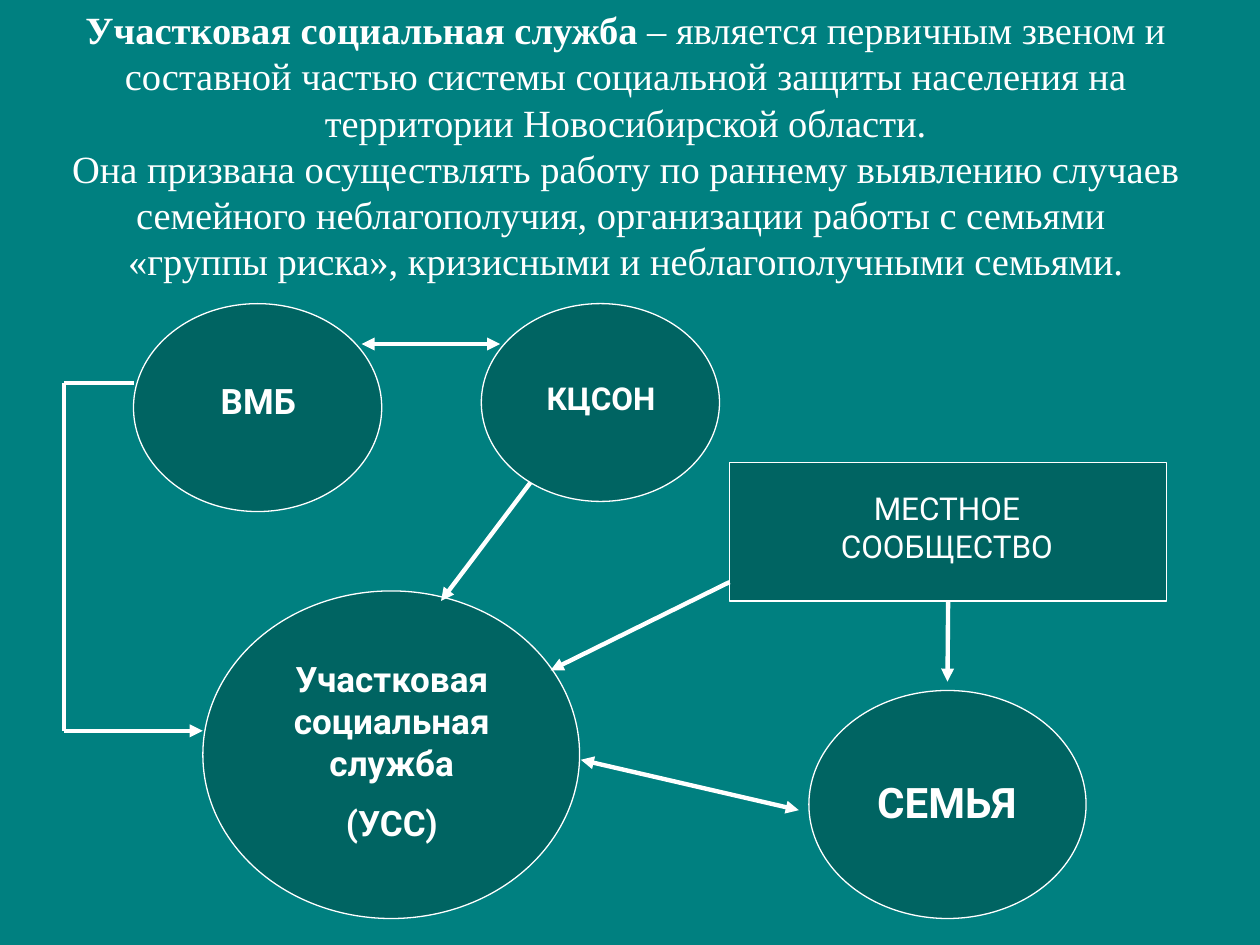
"""Build the slide on the district social service and its partners."""
import lxml.etree
import pptx
import pptx.dml.color
import pptx.enum.shapes
import pptx.enum.text
import pptx.oxml.ns
import pptx.util

Inches = pptx.util.Inches
Pt = pptx.util.Pt
RGBColor = pptx.dml.color.RGBColor
MSO_SHAPE = pptx.enum.shapes.MSO_SHAPE
qn = pptx.oxml.ns.qn

TEAL = RGBColor(0x00, 0x80, 0x80)
DARK_TEAL = RGBColor(0x00, 0x64, 0x62)
WHITE = RGBColor(0xFF, 0xFF, 0xFF)


def add_text(slide, box, text, font_name, size, bold):
    textbox = slide.shapes.add_textbox(*map(Inches, box))
    text_frame = textbox.text_frame
    text_frame.word_wrap = True
    text_frame.auto_size = pptx.enum.text.MSO_AUTO_SIZE.SHAPE_TO_FIT_TEXT
    text_frame.text = text
    for paragraph in text_frame.paragraphs:
        paragraph.alignment = pptx.enum.text.PP_ALIGN.CENTER
        for run in paragraph.runs:
            run.font.name = font_name
            run.font.size = Pt(size)
            run.font.bold = bold
            run.font.color.rgb = WHITE
    return text_frame


def add_line(slide, start, end, arrowheads):
    connector = slide.shapes.add_connector(
        pptx.enum.shapes.MSO_CONNECTOR.STRAIGHT, *map(Inches, start + end))
    connector.line.color.rgb = WHITE
    connector.line.width = Pt(2.5)
    line_properties = connector.line._get_or_add_ln()
    for arrowhead in arrowheads:
        lxml.etree.SubElement(line_properties, qn(f"a:{arrowhead}"), type="triangle")
    lxml.etree.SubElement(connector._element.spPr, qn("a:effectLst"))
    return connector


presentation = pptx.Presentation()
presentation.slide_width = Inches(10)
presentation.slide_height = Inches(7.5)
slide = presentation.slides.add_slide(presentation.slide_layouts[6])
slide.background.fill.solid()
slide.background.fill.fore_color.rgb = TEAL

nodes = [
    (MSO_SHAPE.OVAL, (1.61, 4.69, 2.99, 2.6), (2.01, 5.17, 2.2, 1.6),
     "Участковая социальная служба\n(УСС)", 20, True),
    (MSO_SHAPE.RECTANGLE, (5.79, 3.67, 3.47, 1.1), (6.02, 3.83, 2.99, 0.7),
     "МЕСТНОЕ СООБЩЕСТВО", 18, False),
    (MSO_SHAPE.OVAL, (6.42, 5.48, 2.2, 1.81), (6.73, 6.11, 1.57, 0.5),
     "СЕМЬЯ", 24, True),
    (MSO_SHAPE.OVAL, (1.06, 2.41, 1.97, 1.65), (1.38, 2.96, 1.34, 0.43),
     "ВМБ", 20, True),
    (MSO_SHAPE.OVAL, (3.82, 2.41, 1.89, 1.57), (4.06, 2.96, 1.42, 0.4),
     "КЦСОН", 18, True),
]
node_shapes = []
for shape_type, shape_box, text_box, label, size, bold in nodes:
    shape = slide.shapes.add_shape(shape_type, *map(Inches, shape_box))
    shape.shadow.inherit = False
    shape.fill.solid()
    shape.fill.fore_color.rgb = DARK_TEAL
    shape.line.color.rgb = WHITE
    shape.line.width = Pt(0.75)
    node_shapes.append(shape)
    text_frame = add_text(slide, text_box, label, "Roboto", size, bold)
    for paragraph in text_frame.paragraphs[1:]:
        paragraph.space_before = Pt(size / 2)

links = [
    ((2.87, 2.73), (3.97, 2.73), ("headEnd", "tailEnd")),
    ((4.21, 3.83), (3.5, 4.77), ("tailEnd",)),
    ((5.79, 4.62), (4.37, 5.32), ("tailEnd",)),
    ((4.61, 6.03), (6.34, 6.43), ("headEnd", "tailEnd")),
    ((1.06, 3.04), (0.51, 3.04), ()),
    ((0.51, 3.04), (0.51, 5.8), ()),
    ((0.51, 5.8), (1.61, 5.8), ("tailEnd",)),
]
for start, end, arrowheads in links:
    add_line(slide, start, end, arrowheads)

community = node_shapes[1]
community_to_family = add_line(slide, (7.52, 4.77), (7.52, 5.41), ("tailEnd",))
community_to_family.begin_connect(community, 2)

term = "Участковая социальная служба"
definition = add_text(
    slide, (0.12, 0, 9.69, 2.3),
    term + "\n"
    "Она призвана осуществлять работу по раннему выявлению случаев "
    "семейного неблагополучия, организации работы с семьями \n"
    "«группы риска», кризисными и неблагополучными семьями.",
    "Times New Roman", 22, False)
opening = definition.paragraphs[0]
opening.runs[0].font.bold = True
explanation = opening.add_run()
explanation.text = (" – является первичным звеном и составной частью системы "
                    "социальной защиты населения на территории Новосибирской области.")
explanation.font.name = "Times New Roman"
explanation.font.size = Pt(22)
explanation.font.bold = False
explanation.font.color.rgb = WHITE

presentation.save("out.pptx")
